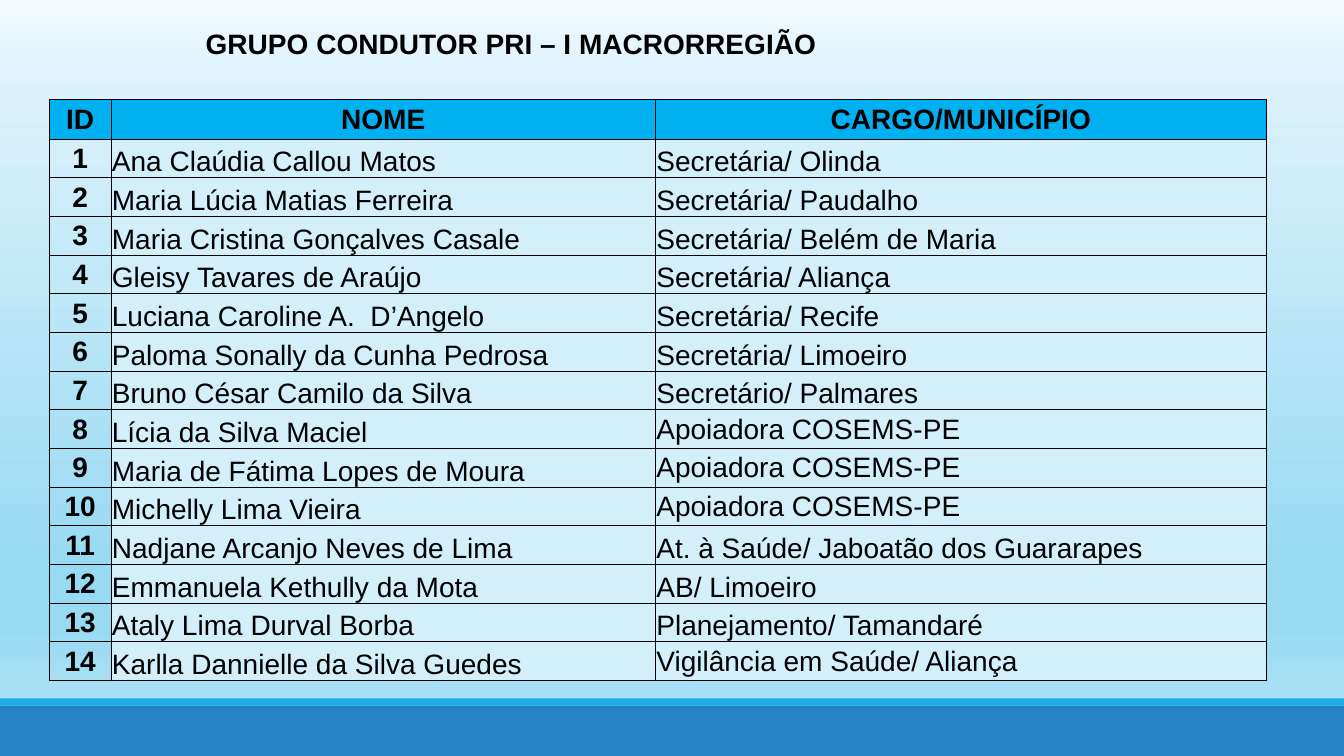
import pptx
import pptx.util
import pptx.dml.color
import pptx.enum.shapes
import pptx.enum.text
import pptx.oxml
import pptx.oxml.ns

Inches = pptx.util.Inches
RGBColor = pptx.dml.color.RGBColor
ALIGN = pptx.enum.text.PP_ALIGN
ANCHOR = pptx.enum.text.MSO_ANCHOR

BLACK = RGBColor(0x00, 0x00, 0x00)
HEADER_BLUE = RGBColor(0x00, 0xB0, 0xF0)
CELL_BLUE = RGBColor(0xD2, 0xEF, 0xFA)
FOOTER_BLUE = RGBColor(0x26, 0x83, 0xC6)
STRIPE_BLUE = RGBColor(0x1C, 0xAD, 0xE4)
BACKGROUND_STOPS = [
    (0, RGBColor(0xF4, 0xFB, 0xFE)),
    (9, RGBColor(0xDE, 0xF3, 0xFB)),
    (74, RGBColor(0x99, 0xDA, 0xF3)),
    (83, RGBColor(0x99, 0xDA, 0xF3)),
    (100, RGBColor(0xBB, 0xE6, 0xF7)),
]

HEADERS = ["ID", "NOME", "CARGO/MUNICÍPIO"]
MEMBERS = [
    ("Ana Claúdia Callou Matos", "Secretária/ Olinda"),
    ("Maria Lúcia Matias Ferreira", "Secretária/ Paudalho"),
    ("Maria Cristina Gonçalves Casale", "Secretária/ Belém de Maria"),
    ("Gleisy Tavares de Araújo", "Secretária/ Aliança"),
    ("Luciana Caroline A.  D’Angelo", "Secretária/ Recife"),
    ("Paloma Sonally da Cunha Pedrosa", "Secretária/ Limoeiro"),
    ("Bruno César Camilo da Silva", "Secretário/ Palmares"),
    ("Lícia da Silva Maciel", "Apoiadora COSEMS-PE"),
    ("Maria de Fátima Lopes de Moura", "Apoiadora COSEMS-PE"),
    ("Michelly Lima Vieira", "Apoiadora COSEMS-PE"),
    ("Nadjane Arcanjo Neves de Lima", "At. à Saúde/ Jaboatão dos Guararapes"),
    ("Emmanuela Kethully da Mota", "AB/ Limoeiro"),
    ("Ataly Lima Durval Borba", "Planejamento/ Tamandaré"),
    ("Karlla Dannielle da Silva Guedes", "Vigilância em Saúde/ Aliança"),
]
SECRETARY_ROWS = range(1, 8)
MIDDLE_ROLE_ROWS = (8, 9, 10, 14)
COLUMN_WIDTHS = [0.61, 5.4, 6.06]
HEADER_HEIGHT = 0.39
TABLE_HEIGHT = 5.76


def write_text(paragraph, text, bold, alignment):
    paragraph.alignment = alignment
    run = paragraph.add_run()
    run.text = text
    run.font.color.rgb = BLACK
    font_format = {"name": "Arial", "size": pptx.util.Pt(20), "bold": bold}
    for name, value in font_format.items():
        setattr(run.font, name, value)


def add_border(cell, side, points):
    width = pptx.util.Pt(points)
    cell._tc.get_or_add_tcPr().append(pptx.oxml.parse_xml(
        f'<a:ln{side} {pptx.oxml.ns.nsdecls("a")} w="{width}">'
        f'<a:solidFill><a:srgbClr val="{BLACK}"/></a:solidFill></a:ln{side}>'))


presentation = pptx.Presentation()
presentation.slide_width = Inches(13.33)
presentation.slide_height = Inches(7.5)
slide = presentation.slides.add_slide(presentation.slide_layouts[5])

# Background gradient, from top to bottom
background = slide.background.fill
background.gradient()
background.gradient_angle = 270
stop_list = background._fill._gradFill.gsLst
for stop in list(stop_list):
    stop_list.remove(stop)
for position, color in BACKGROUND_STOPS:
    stop_list.append(pptx.oxml.parse_xml(
        f'<a:gs {pptx.oxml.ns.nsdecls("a")} pos="{position * 1000}">'
        f'<a:srgbClr val="{color}"/></a:gs>'))

# Footer bands
for top, height, color in [(7, 0.5, FOOTER_BLUE), (6.93, 0.07, STRIPE_BLUE)]:
    band = slide.shapes.add_shape(
        pptx.enum.shapes.MSO_SHAPE.RECTANGLE,
        0, Inches(top), presentation.slide_width, Inches(height))
    band.shadow.inherit = False
    band.fill.solid()
    band.fill.fore_color.rgb = color
    band.line.fill.background()

# Title
title = slide.shapes.title
title_box = {"left": 1.94, "top": 0.21, "width": 9.61, "height": 0.44}
for name, value in title_box.items():
    setattr(title, name, Inches(value))
title.text_frame.word_wrap = True
title.text_frame.auto_size = pptx.enum.text.MSO_AUTO_SIZE.NONE
title.text_frame.vertical_anchor = ANCHOR.TOP
write_text(title.text_frame.paragraphs[0],
           "GRUPO CONDUTOR PRI – I MACRORREGIÃO", True, ALIGN.LEFT)

# Table of members
rows = [HEADERS] + [(str(number), name, role)
                    for number, (name, role) in enumerate(MEMBERS, 1)]
table = slide.shapes.add_table(
    len(rows), len(HEADERS), Inches(0.49), Inches(0.99),
    Inches(sum(COLUMN_WIDTHS)), Inches(TABLE_HEIGHT)).table
table.first_row = False
table.horz_banding = False
for column, width in zip(table.columns, COLUMN_WIDTHS):
    column.width = Inches(width)

member_height = (TABLE_HEIGHT - HEADER_HEIGHT) / len(MEMBERS)
for row_index, texts in enumerate(rows):
    is_header = row_index == 0
    table.rows[row_index].height = Inches(
        HEADER_HEIGHT if is_header else member_height)
    for column_index, text in enumerate(texts):
        cell = table.cell(row_index, column_index)
        is_label = is_header or column_index == 0
        is_middle = is_label or (
            column_index == 2 and row_index in MIDDLE_ROLE_ROWS)
        cell_format = {
            "margin_left": Inches(0.01),
            "margin_top": Inches(0.01),
            "margin_right": Inches(0.01),
            "margin_bottom": 0,
            "vertical_anchor": ANCHOR.MIDDLE if is_middle else ANCHOR.BOTTOM,
        }
        for name, value in cell_format.items():
            setattr(cell, name, value)

        # The edge between name and role is thicker for the secretaries
        thick_side = {1: "R", 2: "L"}.get(column_index)
        for side in "LRTB":
            is_thick = side == thick_side and row_index in SECRETARY_ROWS
            add_border(cell, side, 1 if is_thick else 0.5)

        if is_label and not is_header:
            cell.fill.background()
        else:
            cell.fill.solid()
            cell.fill.fore_color.rgb = HEADER_BLUE if is_header else CELL_BLUE
        write_text(cell.text_frame.paragraphs[0], text, is_label,
                   ALIGN.CENTER if is_label else ALIGN.LEFT)

presentation.save("out.pptx")
